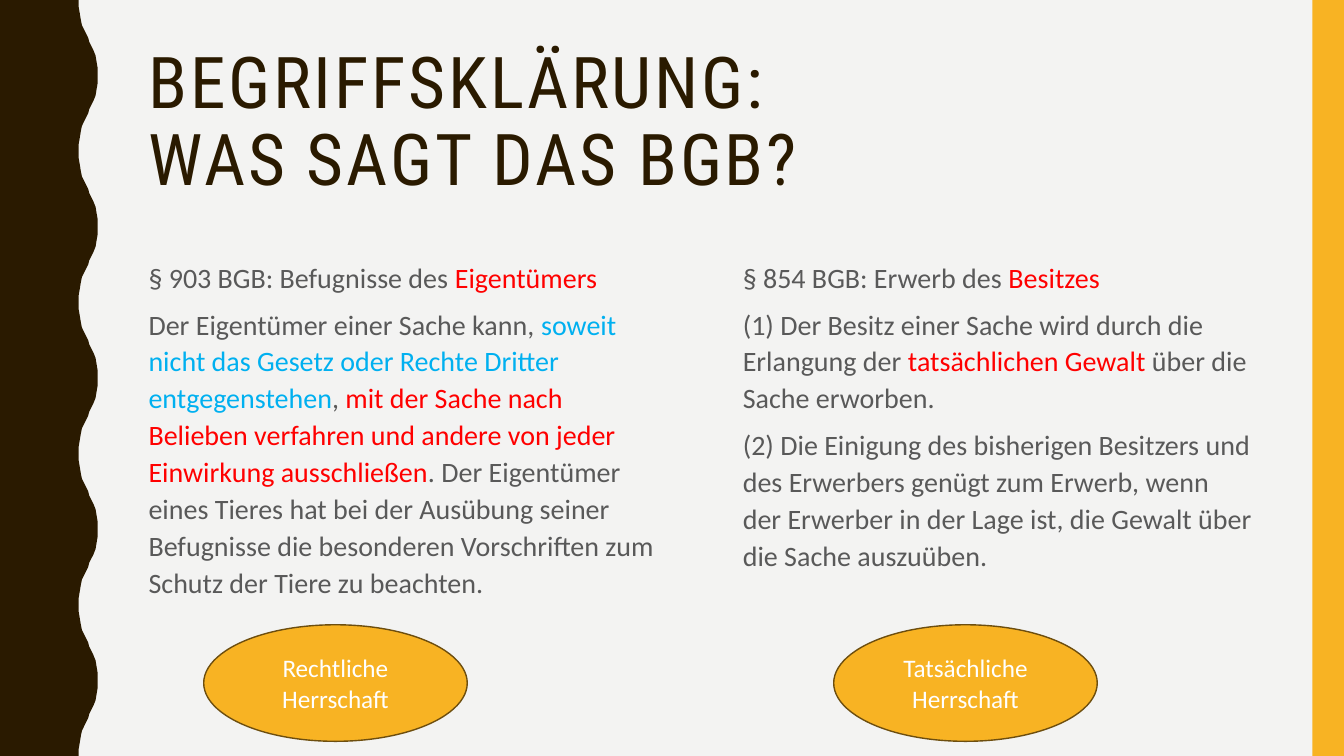
from pptx import Presentation
from pptx.dml.color import RGBColor
from pptx.enum.shapes import MSO_SHAPE
from pptx.enum.text import MSO_ANCHOR, PP_ALIGN
from pptx.util import Emu, Pt

RECTANGLE, OVAL = MSO_SHAPE.RECTANGLE, MSO_SHAPE.OVAL
TOP, MIDDLE = MSO_ANCHOR.TOP, MSO_ANCHOR.MIDDLE
LEFT, CENTER = PP_ALIGN.LEFT, PP_ALIGN.CENTER

WIDTH, HEIGHT = 1280, 720
PAPER, BROWN, AMBER, OUTLINE = "F3F3F2", "2A1A00", "F8B323", "6D4E0F"
GREY, RED, BLUE, WHITE = "595959", "FF0000", "00B0F0", "FFFFFF"

HALF_WAVE = [(75, 0), (75, 7), (76, 13), (77, 19), (78, 24), (80, 28), (82, 32), (84, 36),
             (85, 40), (87, 44), (89, 48), (91, 53), (92, 59), (93, 65), (93, 72)]
WAVE_LENGTH = 144

COLUMNS = [
    (132, 194, "Rechtliche Herrschaft", [
        [("§ 903 BGB: Befugnisse des ", GREY), ("Eigentümers", RED)],
        [("Der Eigentümer einer Sache kann, ", GREY),
         ("soweit nicht das Gesetz oder Rechte Dritter entgegenstehen", BLUE),
         (", ", GREY),
         ("mit der Sache nach Belieben verfahren und andere von jeder "
          "Einwirkung ausschließen", RED),
         (". Der Eigentümer eines Tieres hat bei der Ausübung seiner Befugnisse "
          "die besonderen Vorschriften zum Schutz der Tiere zu beachten.", GREY)],
    ]),
    (698, 794, "Tatsächliche Herrschaft", [
        [("§ 854 BGB: Erwerb des ", GREY), ("Besitzes", RED)],
        [("(1) Der Besitz einer Sache wird durch die Erlangung der ", GREY),
         ("tatsächlichen Gewalt", RED),
         (" über die Sache erworben.", GREY)],
        [("(2) Die Einigung des bisherigen Besitzers und des Erwerbers genügt zum "
          "Erwerb, wenn der Erwerber in der Lage ist, die Gewalt über die Sache "
          "auszuüben.", GREY)],
    ]),
]


def px(length):
    return Emu(length * 9525)


def rgb(color):
    return RGBColor.from_string(color)


def write(frame, paragraphs, size, font="Calibri", align=LEFT, anchor=TOP,
          line_spacing=1.0, space_before=0, tracking=0):
    frame.word_wrap = True
    frame.vertical_anchor = anchor
    for index, passages in enumerate(paragraphs):
        paragraph = frame.add_paragraph() if index else frame.paragraphs[0]
        paragraph.alignment = align
        paragraph.line_spacing = line_spacing
        paragraph.space_before = Pt(space_before)
        for words, color in passages:
            for number, line in enumerate(words.split("\n")):
                if number:
                    paragraph.add_line_break()
                run = paragraph.add_run()
                run.text = line
                run.font.name = font
                run.font.size = Pt(size)
                run.font.color.rgb = rgb(color)
                if tracking:
                    run.font._element.set("spc", str(tracking * 100))


class Canvas:
    """Draws the styled elements of the slide."""

    def __init__(self, slide):
        self.slide = slide
        slide.background.fill.solid()
        slide.background.fill.fore_color.rgb = rgb(PAPER)

    def paint(self, shape, fill, line=None):
        shape.shadow.inherit = False
        shape.fill.solid()
        shape.fill.fore_color.rgb = rgb(fill)
        if line:
            shape.line.color.rgb = rgb(line)
            shape.line.width = Pt(1)
        else:
            shape.line.fill.background()

    def shape(self, kind, left, top, width, height, fill, line=None):
        shape = self.slide.shapes.add_shape(kind, px(left), px(top), px(width), px(height))
        self.paint(shape, fill, line)
        return shape

    def wave(self):
        falling = [(x, WAVE_LENGTH - y) for x, y in reversed(HALF_WAVE[:-1])]
        edge = [(x, y + start) for start in range(0, HEIGHT, WAVE_LENGTH)
                for x, y in HALF_WAVE + falling]
        builder = self.slide.shapes.build_freeform(0, 0, scale=px(1))
        builder.add_line_segments(edge + [(0, HEIGHT)], close=True)
        self.paint(builder.convert_to_shape(), BROWN)

    def text(self, left, top, width, height, paragraphs, **style):
        box = self.slide.shapes.add_textbox(px(left), px(top), px(width), px(height))
        write(box.text_frame, paragraphs, **style)

    def oval(self, left, top, label):
        oval = self.shape(OVAL, left, top, 251, 111, AMBER, OUTLINE)
        write(oval.text_frame, [[(label, WHITE)]], size=18, align=CENTER, anchor=MIDDLE)


def main():
    deck = Presentation()
    deck.slide_width, deck.slide_height = px(WIDTH), px(HEIGHT)
    canvas = Canvas(deck.slides.add_slide(deck.slide_layouts[6]))
    canvas.wave()
    canvas.shape(RECTANGLE, 1250, 0, 30, HEIGHT, AMBER)
    canvas.text(132, 40, 1068, 156, [[("BEGRIFFSKLÄRUNG:\nWAS SAGT DAS BGB?", BROWN)]],
                size=51, font="Roboto Condensed", anchor=MIDDLE, line_spacing=0.9, tracking=2)
    for text_left, oval_left, rule, paragraphs in COLUMNS:
        canvas.text(text_left, 240, 504, 380, paragraphs,
                    size=20, line_spacing=1.1, space_before=7)
        canvas.oval(oval_left, 595, rule)
    deck.save("out.pptx")


if __name__ == "__main__":
    main()
